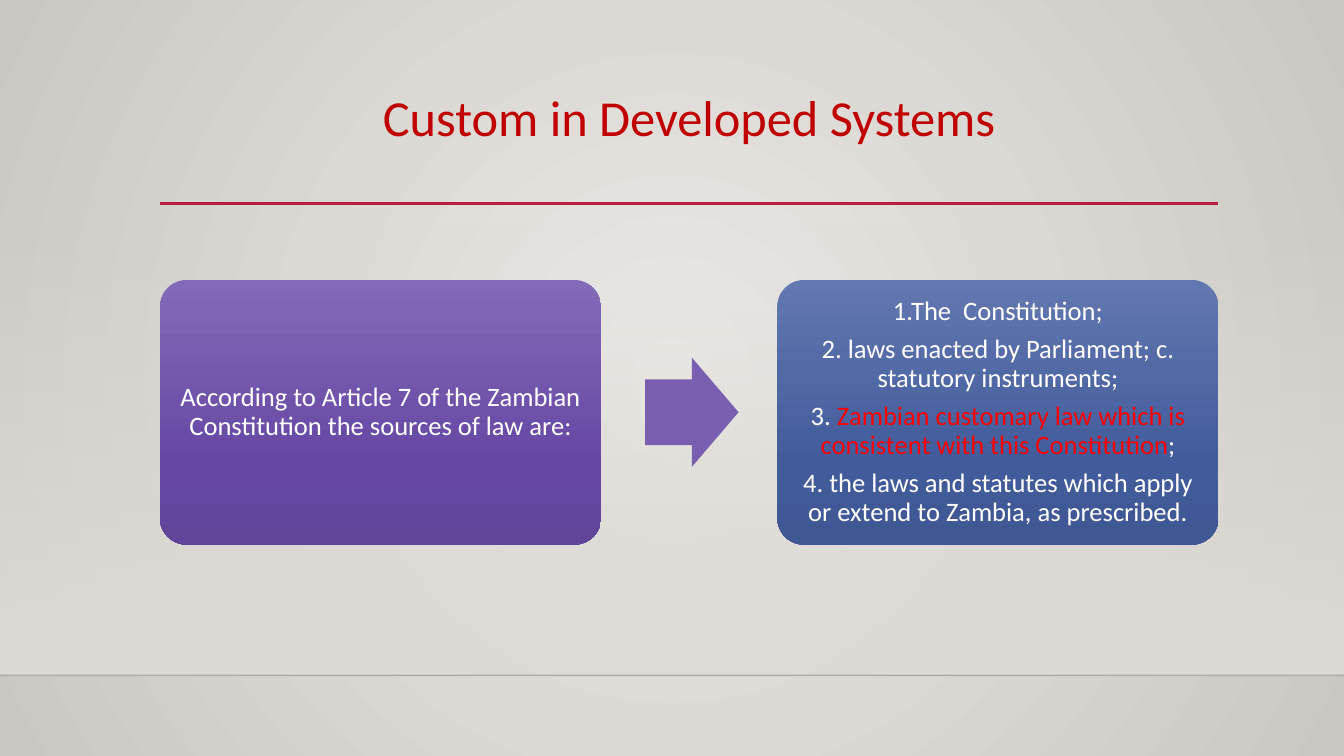
from lxml.etree import SubElement
from pptx import Presentation
from pptx.dml.color import RGBColor
from pptx.enum.shapes import MSO_CONNECTOR, MSO_SHAPE
from pptx.enum.text import MSO_ANCHOR, PP_ALIGN
from pptx.oxml.ns import qn
from pptx.util import Pt

WHITE = RGBColor(0xFF, 0xFF, 0xFF)
BLACK = RGBColor(0x00, 0x00, 0x01)
TITLE_RED = RGBColor(0xC0, 0x00, 0x00)
RULE_RED = RGBColor(0xB7, 0x1E, 0x42)
BRIGHT_RED = RGBColor(0xFF, 0x00, 0x00)
ARROW_PURPLE = RGBColor(0x79, 0x5F, 0xAF)
PAPER = RGBColor(0xDF, 0xDB, 0xD5)
GLOW = [(0, RGBColor(0xEC, 0xEA, 0xE7), 100), (100, RGBColor(0xCA, 0xC7, 0xC1), 100)]
WALL = [(0, PAPER, 0), (100, PAPER, 100)]
PURPLE = [(0, RGBColor(0x83, 0x6A, 0xB8), 100), (69, RGBColor(0x66, 0x48, 0xA3), 100),
          (100, RGBColor(0x60, 0x45, 0x9A), 100)]
BLUE = [(0, RGBColor(0x63, 0x78, 0xB0), 100), (69, RGBColor(0x42, 0x5B, 0x9B), 100),
        (100, RGBColor(0x3F, 0x57, 0x93), 100)]

W, H = 960, 540
LEFT, WIDTH = 114.3, 756
FLOOR = 482.4

INTRO = [[("According to Article 7 of the Zambian Constitution the sources of law are:", WHITE)]]
SOURCES = [
    [("1.The  Constitution;", WHITE)],
    [("2. laws enacted by Parliament; c. statutory instruments;", WHITE)],
    [("3. ", WHITE),
     ("Zambian customary law which is consistent with this Constitution", BRIGHT_RED),
     (";", WHITE)],
    [("4. the laws and statutes which apply or extend to Zambia, as prescribed.", WHITE)],
]


def set_gradient(fill, props, stops, radial=False):
    """Swap the solid fill in props for a gradient of (position, colour, opacity) stops."""
    fill.solid()
    fill.fore_color.rgb = stops[0][1]
    solid = props.find(qn("a:solidFill"))
    grad = props.makeelement(qn("a:gradFill"), {"rotWithShape": "1"})
    props.replace(solid, grad)
    gs_list = SubElement(grad, qn("a:gsLst"))
    for pos, color, opacity in stops:
        gs = SubElement(gs_list, qn("a:gs"), pos=str(pos * 1000))
        clr = SubElement(gs, qn("a:srgbClr"), val=str(color))
        if opacity < 100:
            SubElement(clr, qn("a:alpha"), val=str(opacity * 1000))
    if radial:
        path = SubElement(grad, qn("a:path"), {"path": "circle"})
        SubElement(path, qn("a:fillToRect"), {side: "50000" for side in "ltrb"})
    else:
        SubElement(grad, qn("a:lin"), ang="5400000", scaled="0")


def add_shape(s, kind, x, y, w, h):
    sp = s.shapes.add_shape(kind, Pt(x), Pt(y), Pt(w), Pt(h))
    sp.shadow.inherit = False
    sp.line.fill.background()
    return sp


def add_rule(s, x, y, w, color, weight, opacity=100):
    line = s.shapes.add_connector(MSO_CONNECTOR.STRAIGHT, Pt(x), Pt(y), Pt(x + w), Pt(y))
    line.line.color.rgb = color
    line.line.width = Pt(weight)
    if opacity < 100:
        clr = line._element.spPr.find(".//" + qn("a:srgbClr"))
        SubElement(clr, qn("a:alpha"), val=str(opacity * 1000))
    SubElement(line._element.spPr, qn("a:effectLst"))


def write_text(tf, paragraphs, size, anchor, margins, space_after=0):
    frame_format = {"word_wrap": True, "vertical_anchor": anchor}
    for side, inset in zip(("left", "top", "right", "bottom"), margins):
        frame_format["margin_" + side] = Pt(inset)
    for name, value in frame_format.items():
        setattr(tf, name, value)
    para_format = {"alignment": PP_ALIGN.CENTER, "line_spacing": 0.9,
                   "space_after": Pt(space_after)}
    for i, runs in enumerate(paragraphs):
        p = tf.paragraphs[0] if i == 0 else tf.add_paragraph()
        for name, value in para_format.items():
            setattr(p, name, value)
        for text, color in runs:
            r = p.add_run()
            r.text = text
            r.font.name = "Calibri"
            r.font.size = Pt(size)
            r.font.color.rgb = color


def add_backdrop(s, w, h, floor):
    fill = s.background.fill
    fill.solid()
    set_gradient(fill, s._element.find(".//" + qn("p:bgPr")), GLOW, radial=True)
    wall = add_shape(s, MSO_SHAPE.RECTANGLE, 0, 159, w, floor - 159)
    set_gradient(wall.fill, wall._element.spPr, WALL)
    add_rule(s, 0, floor, w, BLACK, 1, opacity=20)


def add_title(s, x, y, w, h, text):
    add_rule(s, x, y + h - 0.5, w, RULE_RED, 2.5)
    tf = s.shapes.add_textbox(Pt(x), Pt(y), Pt(w), Pt(h)).text_frame
    write_text(tf, [[(text, TITLE_RED)]], 36, MSO_ANCHOR.TOP, (7.2, 3.6, 7.2, 3.6))


def add_card(s, x, y, w, h, stops, paragraphs):
    card = add_shape(s, MSO_SHAPE.ROUNDED_RECTANGLE, x, y, w, h)
    card.adjustments[0] = 0.1
    set_gradient(card.fill, card._element.spPr, stops)
    write_text(card.text_frame, paragraphs, 19, MSO_ANCHOR.MIDDLE, (5.7,) * 4, 6.65)


def add_process(s, x, y, w, h):
    # Cards are 1/2.4 of the row; the arrow starts a tenth of a card after the first
    card_w = w / 2.4
    arrow_w, arrow_h = card_w * 0.212, card_w * 0.248
    add_card(s, x, y, card_w, h, PURPLE, INTRO)
    arrow = add_shape(s, MSO_SHAPE.RIGHT_ARROW, x + card_w * 1.1, y + (h - arrow_h) / 2,
                      arrow_w, arrow_h)
    arrow.adjustments[0], arrow.adjustments[1] = 0.6, 0.5
    arrow.fill.solid()
    arrow.fill.fore_color.rgb = ARROW_PURPLE
    add_card(s, x + w - card_w, y, card_w, h, BLUE, SOURCES)


def main():
    prs = Presentation()
    prs.slide_width, prs.slide_height = Pt(W), Pt(H)
    s = prs.slides.add_slide(prs.slide_layouts[6])
    add_backdrop(s, W, H, FLOOR)
    add_title(s, LEFT, 63.2, WIDTH, 82.6, "Custom in Developed Systems")
    add_process(s, LEFT, 200, WIDTH, 189)
    prs.save("out.pptx")


if __name__ == "__main__":
    main()
